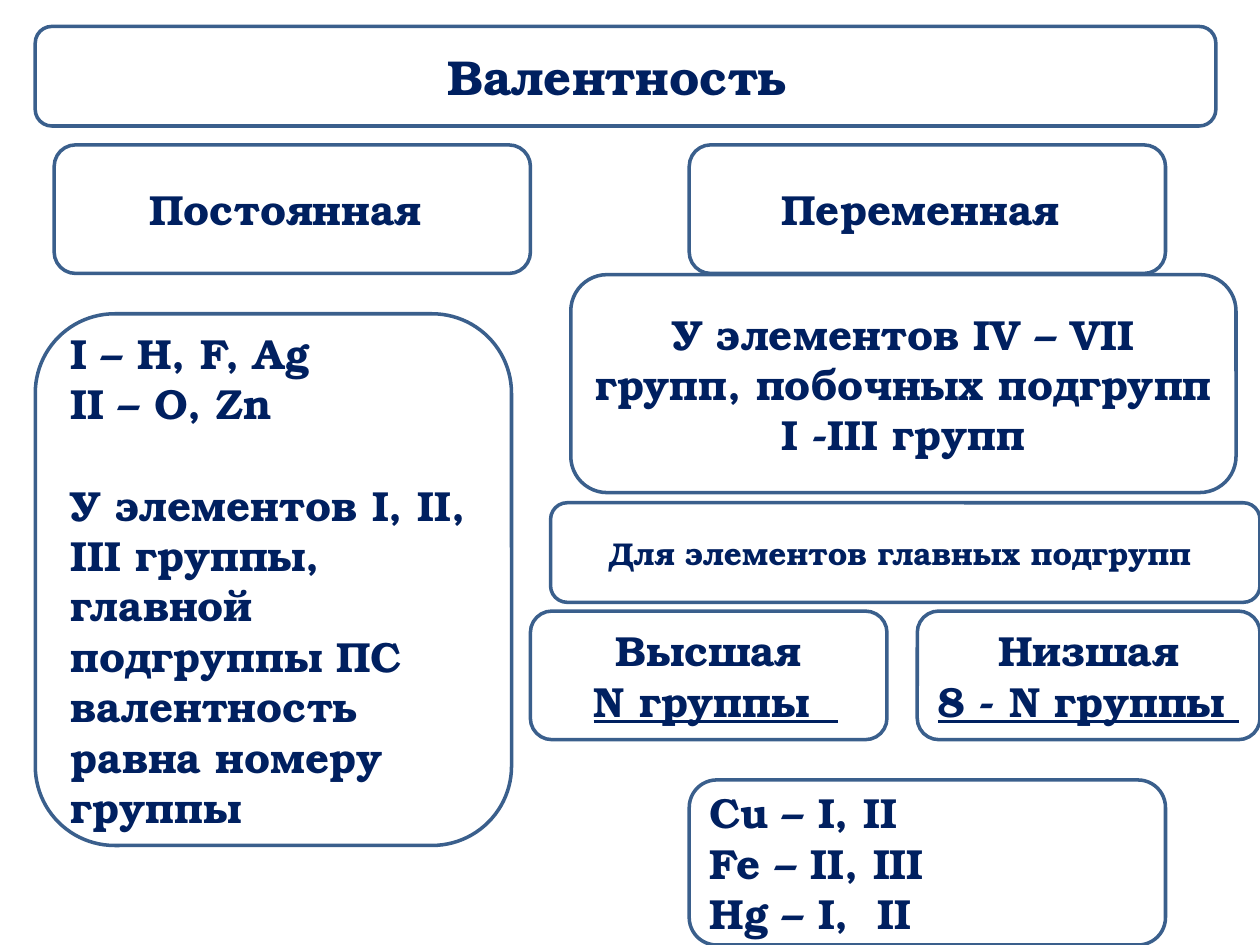
from dataclasses import dataclass
from typing import NamedTuple

from pptx import Presentation
from pptx import util as u
from pptx.dml.color import RGBColor
from pptx.enum import shapes, text

PX = 9144  # EMU per px, 100 px to the inch
FONT = "TeX Gyre Bonum"
COLORS = {"fill": "FFFFFF", "border": "3A5F8C", "text": "002060"}
LEFT, CENTER = text.PP_ALIGN.LEFT, text.PP_ALIGN.CENTER


class Run(NamedTuple):
    words: str
    underline: bool = False


class Line(NamedTuple):
    runs: list[Run]
    gap_before: int = 0  # points


@dataclass
class Box:
    left: int
    top: int
    width: int
    height: int
    lines: list[Line]
    size: int = 24
    align: text.PP_ALIGN = CENTER


def plain(*lines: str) -> list[Line]:
    return [Line([Run(words)]) for words in lines]


def color(name: str) -> RGBColor:
    return RGBColor.from_string(COLORS[name])


def draw_box(slide, box: Box) -> None:
    shape = slide.shapes.add_shape(
        shapes.MSO_SHAPE.ROUNDED_RECTANGLE,
        *(side * PX for side in (box.left, box.top, box.width, box.height)))
    shape.shadow.inherit = False
    shape.fill.solid()
    shape.fill.fore_color.rgb = color("fill")
    shape.line.color.rgb = color("border")
    shape.line.width = u.Pt(2)
    frame = shape.text_frame
    frame.word_wrap = True
    frame.vertical_anchor = text.MSO_ANCHOR.MIDDLE
    for index, line in enumerate(box.lines):
        paragraph = frame.add_paragraph() if index else frame.paragraphs[0]
        paragraph.alignment = box.align
        if line.gap_before:
            paragraph.space_before = u.Pt(line.gap_before)
        for part in line.runs:
            run = paragraph.add_run()
            run.text = part.words
            run.font.name = FONT
            run.font.size = u.Pt(box.size)
            run.font.bold = True
            if part.underline:
                run.font.underline = True
            run.font.color.rgb = color("text")


CONSTANT_RULE = Line([Run("У элементов I, II, III группы, главной подгруппы ПС "
                          "валентность равна номеру группы")], gap_before=29)

BOXES = [
    # Title and the two kinds of valence
    Box(28, 21, 937, 79, plain("Валентность "), size=28),
    Box(43, 115, 378, 102, plain("Постоянная ")),
    Box(547, 115, 378, 102, plain("Переменная ")),
    # Constant valence
    Box(28, 249, 378, 422,
        plain("I – H, F, Ag", "II – O, Zn") + [CONSTANT_RULE], align=LEFT),
    # Variable valence: examples and rule
    Box(547, 619, 378, 131,
        plain("Cu – I, II", "Fe – II, III", "Hg – I,  II"), align=LEFT),
    Box(453, 218, 528, 173,
        plain("У элементов IV – VII групп, побочных подгрупп I -III групп")),
    # Highest and lowest valence in the main subgroups
    Box(421, 485, 283, 102,
        plain("Высшая") + [Line([Run(" "), Run("N группы  ", True)])]),
    Box(728, 485, 272, 102,
        plain("Низшая") + [Line([Run("8 - N группы ", True)])]),
    Box(437, 399, 563, 79, plain("Для элементов главных подгрупп "), size=18),
]


def main() -> None:
    presentation = Presentation()
    presentation.slide_width = 1000 * PX
    presentation.slide_height = 750 * PX
    slide = presentation.slides.add_slide(presentation.slide_layouts[6])
    for box in BOXES:
        draw_box(slide, box)
    presentation.save("out.pptx")


if __name__ == "__main__":
    main()
